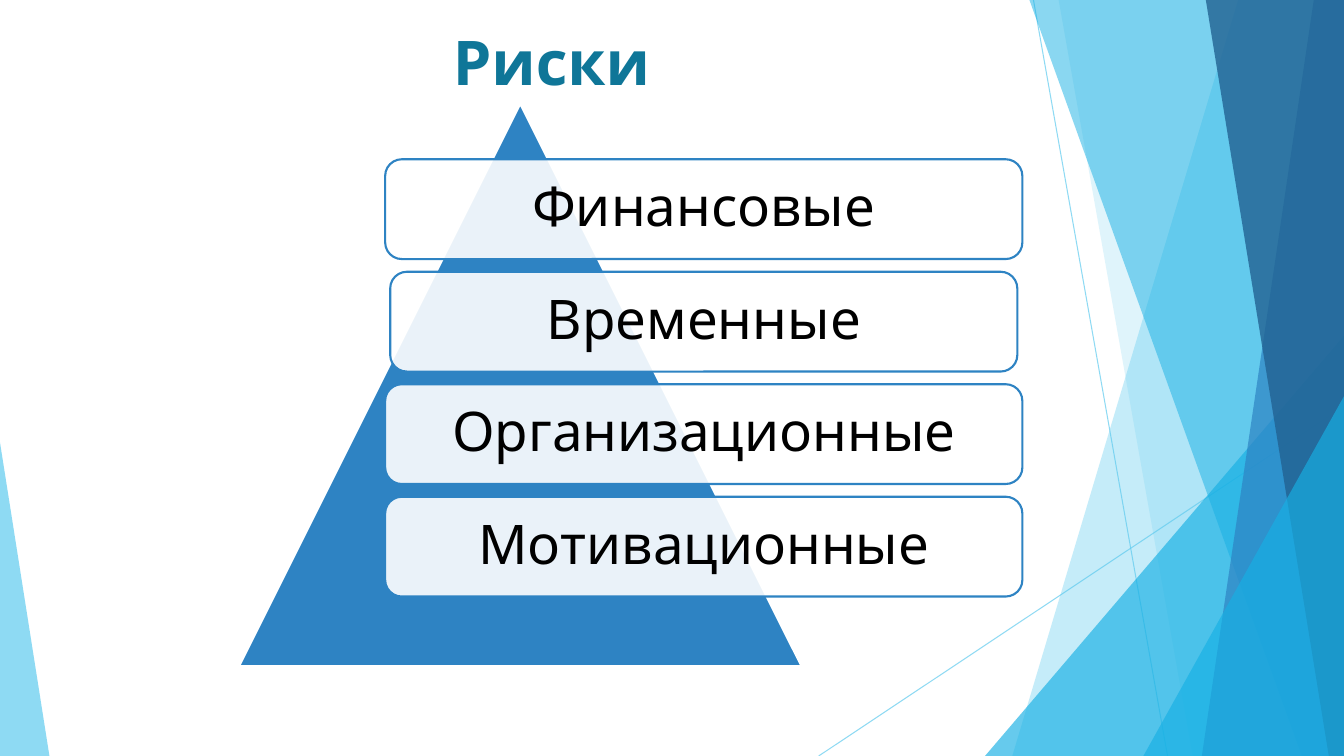
import pptx
import pptx.dml.color
import pptx.enum.shapes
import pptx.enum.text
import pptx.oxml
import pptx.oxml.ns
import pptx.util
from dataclasses import dataclass

Inches = pptx.util.Inches
Pt = pptx.util.Pt
RGBColor = pptx.dml.color.RGBColor
Shape = pptx.enum.shapes.MSO_SHAPE
Anchor = pptx.enum.text.MSO_ANCHOR
Align = pptx.enum.text.PP_ALIGN

FONT = "Cabin"
SKY = RGBColor(0x5F, 0xCB, 0xEF)
CYAN = RGBColor(0x17, 0xB0, 0xE4)
BLUE = RGBColor(0x2E, 0x83, 0xC3)
NAVY = RGBColor(0x22, 0x62, 0x92)
TEAL = RGBColor(0x0F, 0x76, 0x98)
WHITE = RGBColor(0xFF, 0xFF, 0xFF)
BLACK = RGBColor(0, 0, 0)

RISKS = ["Финансовые", "Временные", "Организационные", "Мотивационные"]


@dataclass
class Box:
    """A rectangle on the slide, in inches."""

    left: float
    top: float
    width: float
    height: float

    @property
    def right(self):
        """Return the right edge."""
        return self.left + self.width

    @property
    def bottom(self):
        """Return the bottom edge."""
        return self.top + self.height

    def lengths(self):
        """Return the four measures as slide lengths."""
        return [Inches(n) for n in (self.left, self.top, self.width, self.height)]


def set_opacity(fill_format, percent):
    """Make a solid fill partly transparent."""
    color = fill_format._xPr.find(".//" + pptx.oxml.ns.qn("a:srgbClr"))
    alpha = color.makeelement(pptx.oxml.ns.qn("a:alpha"), {"val": str(percent * 1000)})
    color.append(alpha)


def paint(shape, color, opacity=100, line=None):
    """Give a shape its fill and outline, without a shadow."""
    shape.shadow.inherit = False
    shape.fill.solid()
    shape.fill.fore_color.rgb = color
    if opacity < 100:
        set_opacity(shape.fill, opacity)
    if line is None:
        shape.line.fill.background()
    else:
        shape.line.color.rgb = line
        shape.line.width = Pt(1.5)


def write(frame, text, size, color, bold=False):
    """Put one centred paragraph into a text frame."""
    frame.word_wrap = True
    frame.text = text
    para = frame.paragraphs[0]
    para.alignment = Align.CENTER
    font = para.runs[0].font
    font.name, font.size, font.bold = FONT, Pt(size), bold
    font.color.rgb = color
    return para


def add_ray(page, start, end):
    """Draw a thin translucent line."""
    ray = page.shapes.add_connector(
        pptx.enum.shapes.MSO_CONNECTOR.STRAIGHT, *map(Inches, start + end))
    ray.line.color.rgb = SKY
    ray.line.width = Pt(0.75)
    set_opacity(ray.line.fill, 70)
    properties = ray._element.spPr
    properties.append(properties.makeelement(pptx.oxml.ns.qn("a:effectLst"), {}))


def add_band(page, box, top_x, bottom_x, color, opacity):
    """Fill the area from a slanted edge to the right side of the box."""
    corners = [(top_x, box.top), (box.right, box.top),
               (box.right, box.bottom), (bottom_x, box.bottom)]
    points = [(Inches(x), Inches(y)) for x, y in corners]
    builder = page.shapes.build_freeform(*points[0])
    builder.add_line_segments(points[1:], close=True)
    paint(builder.convert_to_shape(), color, opacity)


def add_wedge(page, box, apex, color, opacity=100, line=None):
    """Draw a triangle whose apex lies at the given share of its width."""
    wedge = page.shapes.add_shape(Shape.ISOSCELES_TRIANGLE, *box.lengths())
    wedge.adjustments[0] = apex
    paint(wedge, color, opacity, line)


def add_backdrop(page, box):
    """Draw the faceted decoration along the sides of the box."""
    def corner(width, height):
        return Box(box.right - width, box.bottom - height, width, height)

    right, bottom = box.right, box.bottom
    add_ray(page, (right - 3.08, box.top), (right - 1.75, bottom))
    add_ray(page, (right, bottom - 3.47), (right - 5.21, bottom))
    add_band(page, box, right - 1.05, right - 3.29, SKY, 36)
    add_band(page, box, right - 2.83, right - 1.5, SKY, 20)
    add_wedge(page, corner(3.56, 4.17), 1, CYAN, 66)
    add_band(page, box, right - 3.12, right - 0.42, CYAN, 50)
    add_band(page, box, right - 0.3, right - 1.41, BLUE, 70)
    add_band(page, box, right - 1.37, right - 0.15, NAVY, 80)
    add_wedge(page, corner(1.99, 3.57), 1, CYAN, 66)
    add_wedge(page, Box(box.left, bottom - 3.11, 0.49, 3.11), 0, SKY, 70)


def add_title(page, box, text):
    """Write the heading at the top of the box."""
    frame = page.shapes.add_textbox(*box.lengths()).text_frame
    frame.vertical_anchor = Anchor.TOP
    write(frame, text, 44, TEAL, bold=True)


def add_label(page, box, text):
    """Draw a translucent rounded label."""
    label = page.shapes.add_shape(Shape.ROUNDED_RECTANGLE, *box.lengths())
    paint(label, WHITE, 90, BLUE)
    frame = label.text_frame
    frame.vertical_anchor = Anchor.MIDDLE
    frame.margin_left = frame.margin_right = Inches(0.16)
    frame.margin_top = frame.margin_bottom = Inches(0.16)
    write(frame, text, 39, BLACK).line_spacing = 0.9


def add_risk_pyramid(page, box, risks):
    """Draw a pyramid with a stack of risk labels over its right half."""
    add_wedge(page, Box(box.left, box.top, box.height, box.height), 0.5, BLUE, line=WHITE)
    pitch = 0.2 * box.height
    for index, risk in enumerate(risks):
        inset = 0.05 if index == 1 else 0
        top = box.top + 0.55 + index * pitch
        add_label(page, Box(box.left + 1.45 + inset, top, 6.32 - 2 * inset, 0.99), risk)


def main():
    """Build and save the deck."""
    deck = pptx.Presentation()
    deck.slide_width, deck.slide_height = Inches(13.33), Inches(7.5)
    page = deck.slides.add_slide(deck.slide_layouts[6])
    add_backdrop(page, Box(0, 0, 13.33, 7.5))
    add_title(page, Box(0.77, 0.19, 9.4, 0.97), "Риски")
    add_risk_pyramid(page, Box(2.37, 1.03, 7.77, 5.58), RISKS)
    deck.save("out.pptx")


if __name__ == "__main__":
    main()
